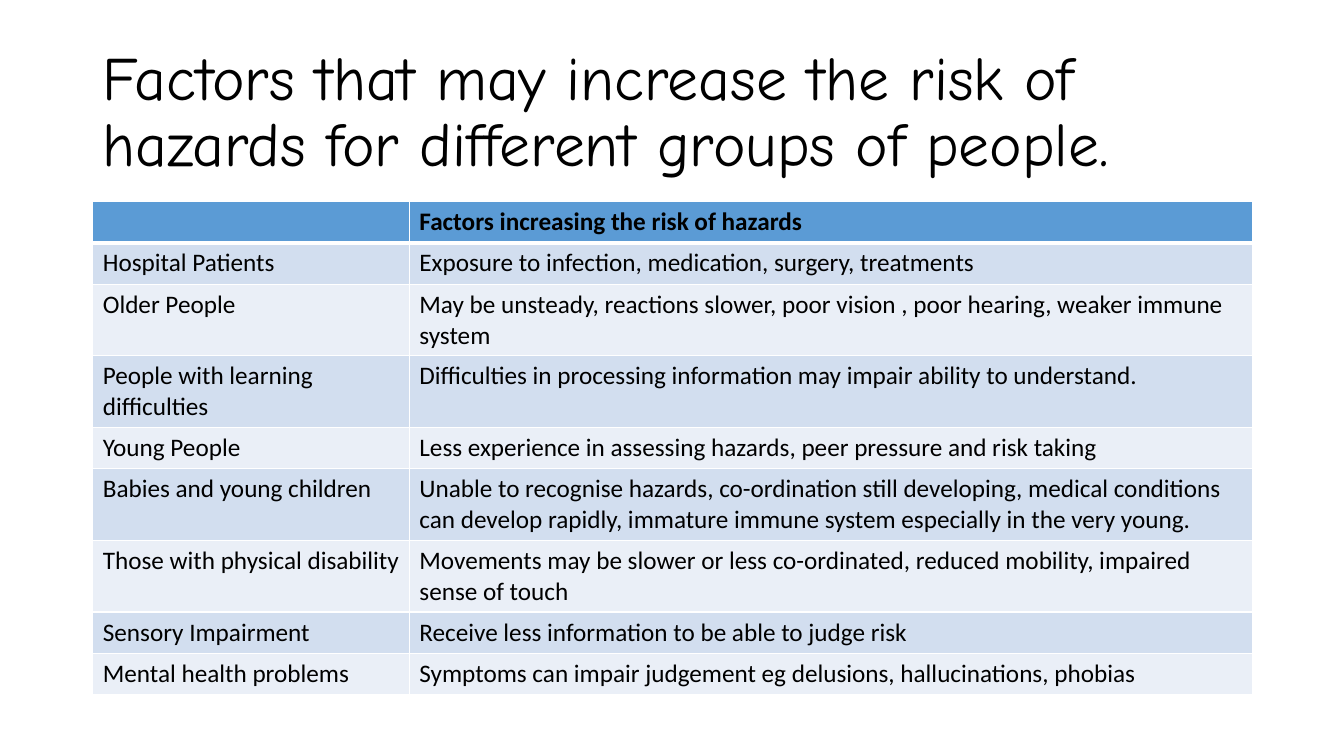
from pptx import Presentation
from pptx.dml.color import RGBColor
from pptx.enum.text import MSO_ANCHOR, PP_ALIGN
from pptx.util import Inches, Pt
from pptx.oxml import parse_xml
from pptx.oxml.ns import nsdecls

# Content
TITLE = "Factors that may increase the risk of hazards for different groups of people."
ROWS = [
    ("", "Factors increasing the risk of hazards"),
    ("Hospital Patients", "Exposure to infection, medication, surgery, treatments"),
    ("Older People", "May be unsteady, reactions slower, poor vision , poor hearing, "
                     "weaker immune system"),
    ("People with learning difficulties",
     "Difficulties in processing information may impair ability to understand."),
    ("Young People", "Less experience in assessing hazards, peer pressure and risk taking"),
    ("Babies and young children",
     "Unable to recognise hazards, co-ordination still developing, medical conditions "
     "can develop rapidly, immature immune system especially in the very young."),
    ("Those with physical disability",
     "Movements may be slower or less co-ordinated, reduced mobility, impaired "
     "sense of touch"),
    ("Sensory Impairment", "Receive less information to be able to judge risk"),
    ("Mental health problems",
     "Symptoms can impair judgement eg delusions, hallucinations, phobias"),
]

# Colours
BLACK = RGBColor(0x00, 0x00, 0x00)
WHITE = RGBColor(0xFF, 0xFF, 0xFF)
HEAD = RGBColor(0x5B, 0x9B, 0xD5)
BANDS = [RGBColor(0xEA, 0xEF, 0xF7), RGBColor(0xD2, 0xDE, 0xEF)]

# Layout
WIDE, HIGH = Inches(13.33), Inches(7.5)
LEFT, SPAN = Inches(0.92), Inches(11.5)
TOP, LINE = Inches(2), Inches(0.41)
SHARES = (3.14 / 11.5, 8.36 / 11.5)


def style(par, face, size, bold=False):
    par.font.name = face
    par.font.size = Pt(size)
    par.font.bold = bold
    par.font.color.rgb = BLACK


def border(cell, base):
    props = cell._tc.get_or_add_tcPr()
    for spot, (side, wide) in enumerate(zip("LRTB", (1, 1, 1, base))):
        props.insert(spot, parse_xml(
            f'<a:ln{side} {nsdecls("a")} w="{Pt(wide)}"><a:solidFill>'
            f'<a:srgbClr val="{WHITE}"/></a:solidFill></a:ln{side}>'))


deck = Presentation()
deck.slide_width, deck.slide_height = WIDE, HIGH
slide = deck.slides.add_slide(deck.slide_layouts[5])

# Title
title = slide.shapes.title
title.left, title.top, title.width, title.height = LEFT, Inches(0.4), SPAN, Inches(1.45)
title.text_frame.text = TITLE
title.text_frame.vertical_anchor = MSO_ANCHOR.MIDDLE
par = title.text_frame.paragraphs[0]
par.alignment = PP_ALIGN.LEFT
par.line_spacing = 0.9
style(par, "Comic Neue", 44)

# Table
table = slide.shapes.add_table(len(ROWS), len(SHARES), LEFT, TOP, SPAN,
                               LINE * len(ROWS)).table
for col, share in zip(table.columns, SHARES):
    col.width = int(SPAN * share)
for r, row in enumerate(ROWS):
    for c, text in enumerate(row):
        cell = table.cell(r, c)
        cell.text = text
        cell.fill.solid()
        cell.fill.fore_color.rgb = BANDS[r % 2] if r else HEAD
        border(cell, 1 if r else 3)
        style(cell.text_frame.paragraphs[0], "Calibri", 18, bold=r == 0)

deck.save("out.pptx")
